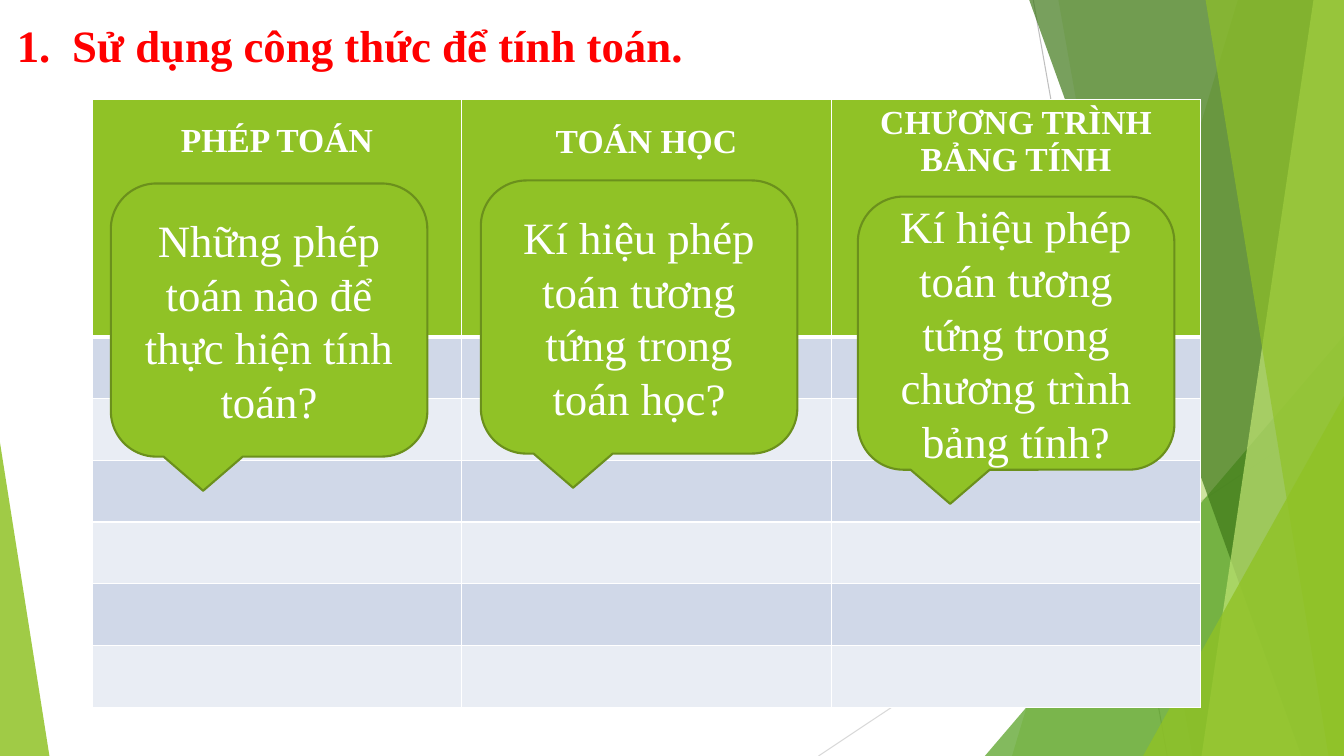
import pptx
import pptx.util
import pptx.dml.color
import pptx.enum.shapes
import pptx.enum.text
import pptx.oxml.ns
from lxml import etree

RGBColor = pptx.dml.color.RGBColor
Shapes = pptx.enum.shapes.MSO_SHAPE
Align = pptx.enum.text.PP_ALIGN
Anchor = pptx.enum.text.MSO_ANCHOR
Pt = pptx.util.Pt
Inches = pptx.util.Inches
qn = pptx.oxml.ns.qn

WHITE = RGBColor(0xFF, 0xFF, 0xFF)
RED = RGBColor(0xFF, 0x00, 0x00)
LIME = RGBColor(0x90, 0xC2, 0x26)
GREEN = RGBColor(0x54, 0xA0, 0x21)
FOREST = RGBColor(0x3F, 0x78, 0x19)
PALE_LIME = RGBColor(0xC0, 0xE4, 0x74)
OLIVE = RGBColor(0x6B, 0x90, 0x1C)
GREY = RGBColor(0xBF, 0xBF, 0xBF)
LIGHT_GREY = RGBColor(0xD9, 0xD9, 0xD9)
BAND_DARK = RGBColor(0xD0, 0xD8, 0xE8)
BAND_LIGHT = RGBColor(0xE9, 0xED, 0xF4)

RAYS = [((76.88, 0), (86.85, 100), GREY), ((100, 53.73), (60.9, 100), LIGHT_GREY)]
BACK_FACETS = [(92.1, 75.3, LIME, 30), (78.75, 88.72, LIME, 20)]
FRONT_FACETS = [(76.58, 96.83, FOREST, 70), (97.73, 89.4, PALE_LIME, 70), (89.7, 98.85, LIME, 65)]
HEADINGS = [("PHÉP TOÁN", 0.23), ("TOÁN HỌC", 0.24), ("CHƯƠNG TRÌNH BẢNG TÍNH", 0.05)]
QUESTIONS = [
    (8.25, 24.27, "Những phép toán nào để thực hiện tính toán?"),
    (35.78, 23.87, "Kí hiệu phép toán tương tứng trong toán học?"),
    (63.83, 26, "Kí hiệu phép toán tương tứng trong chương trình bảng tính?"),
]


class LessonSlide:
    """Draws styled elements on a grid of 100 columns by 100 rows."""

    font = "Times New Roman"

    def __init__(self, deck):
        self.column = deck.slide_width / 100
        self.row = deck.slide_height / 100
        self.slide = deck.slides.add_slide(deck.slide_layouts[5])
        self.shapes = self.slide.shapes

    def place(self, *lengths):
        return [round(n * (self.row if i % 2 else self.column)) for i, n in enumerate(lengths)]

    def add_words(self, paragraph, text, size, color, bold=False, align=Align.CENTER):
        paragraph.alignment = align
        run = paragraph.add_run()
        run.text = text
        run.font.name, run.font.size, run.font.bold = self.font, Pt(size), bold
        run.font.color.rgb = color

    def title(self, text, box, indent):
        heading = self.shapes.title
        heading.left, heading.top, heading.width, heading.height = self.place(*box)
        frame = heading.text_frame
        frame.word_wrap = True
        frame.auto_size = pptx.enum.text.MSO_AUTO_SIZE.NONE
        frame.vertical_anchor = Anchor.TOP
        paragraph = frame.paragraphs[0]
        properties = paragraph._p.get_or_add_pPr()
        properties.set("marL", str(indent))
        properties.set("indent", str(-indent))
        tabs = etree.SubElement(properties, qn("a:tabLst"))
        etree.SubElement(tabs, qn("a:tab"), pos=str(indent), algn="l")
        self.add_words(paragraph, text, 32, RED, True, Align.LEFT)

    def ray(self, start, end, color):
        line = self.shapes.add_connector(
            pptx.enum.shapes.MSO_CONNECTOR.STRAIGHT, *self.place(*start, *end))
        line.line.color.rgb = color
        line.line.width = Pt(0.75)
        etree.SubElement(line._element.spPr, qn("a:effectLst"))

    def tint(self, shape, color, opacity):
        shape.shadow.inherit = False
        shape.fill.solid()
        shape.fill.fore_color.rgb = color
        shape.line.fill.background()
        shade = shape._element.spPr.find(".//" + qn("a:srgbClr"))
        etree.SubElement(shade, qn("a:alpha"), val=str(opacity * 1000))

    def facet(self, top, bottom, color, opacity):
        outline = self.shapes.build_freeform(*self.place(top, 0))
        corners = [(100, 0), (100, 100), (bottom, 100)]
        outline.add_line_segments([self.place(*corner) for corner in corners])
        self.tint(outline.convert_to_shape(), color, opacity)

    def wedge(self, box, apex, color, opacity):
        triangle = self.shapes.add_shape(Shapes.ISOSCELES_TRIANGLE, *self.place(*box))
        triangle.adjustments[0] = apex
        self.tint(triangle, color, opacity)

    def style_cell(self, cell, color, top, bottom):
        properties = cell._tc.get_or_add_tcPr()
        for side, width in zip("LRTB", (1, 1, top, bottom)):
            border = etree.SubElement(properties, qn("a:ln" + side), w=str(Pt(width)))
            fill = etree.SubElement(border, qn("a:solidFill"))
            etree.SubElement(fill, qn("a:srgbClr"), val=str(WHITE))
        cell.fill.solid()
        cell.fill.fore_color.rgb = color

    def table(self, headings, box, header_height, body_rows):
        grid = self.shapes.add_table(body_rows + 1, len(headings), *self.place(*box)).table
        body_height = (box[3] - header_height) / body_rows
        for r, row in enumerate(grid.rows):
            row.height = round(self.row * (body_height if r else header_height))
            color = (BAND_DARK if r % 2 else BAND_LIGHT) if r else LIME
            for cell in row.cells:
                self.style_cell(cell, color, 3 if r == 1 else 1, 1 if r else 3)
        for cell, (text, margin) in zip(grid.rows[0].cells, headings):
            cell.margin_top = Inches(margin)
            self.add_words(cell.text_frame.paragraphs[0], text, 24, WHITE, True)

    def callout(self, left, top, text):
        bubble = self.shapes.add_shape(
            Shapes.ROUNDED_RECTANGULAR_CALLOUT, *self.place(left, top, 23.55, 36.13))
        bubble.shadow.inherit = False
        bubble.fill.solid()
        bubble.fill.fore_color.rgb = LIME
        bubble.line.color.rgb = OLIVE
        bubble.line.width = Pt(1.5)
        frame = bubble.text_frame
        frame.word_wrap = True
        frame.vertical_anchor = Anchor.MIDDLE
        self.add_words(frame.paragraphs[0], text, 32, WHITE)


def main():
    deck = pptx.Presentation()
    deck.slide_width, deck.slide_height = Inches(13.33), Inches(7.5)
    lesson = LessonSlide(deck)
    for ray in RAYS:
        lesson.ray(*ray)
    for facet in BACK_FACETS:
        lesson.facet(*facet)
    lesson.wedge((73.28, 44.4, 26.72, 55.6), 1, GREEN, 72)
    for facet in FRONT_FACETS:
        lesson.facet(*facet)
    lesson.wedge((85.05, 52.4, 14.95, 47.6), 1, LIME, 80)
    lesson.wedge((0, 58.53, 3.68, 41.47), 0, LIME, 85)
    lesson.table(HEADINGS, (6.85, 13.2, 82.5, 80.4), 31.33, 6)
    for question in QUESTIONS:
        lesson.callout(*question)
    lesson.title("1.\tSử dụng công thức để tính toán.", (0.5, 1.73, 52.14, 8.53), Inches(0.55))
    deck.save("out.pptx")


if __name__ == "__main__":
    main()
